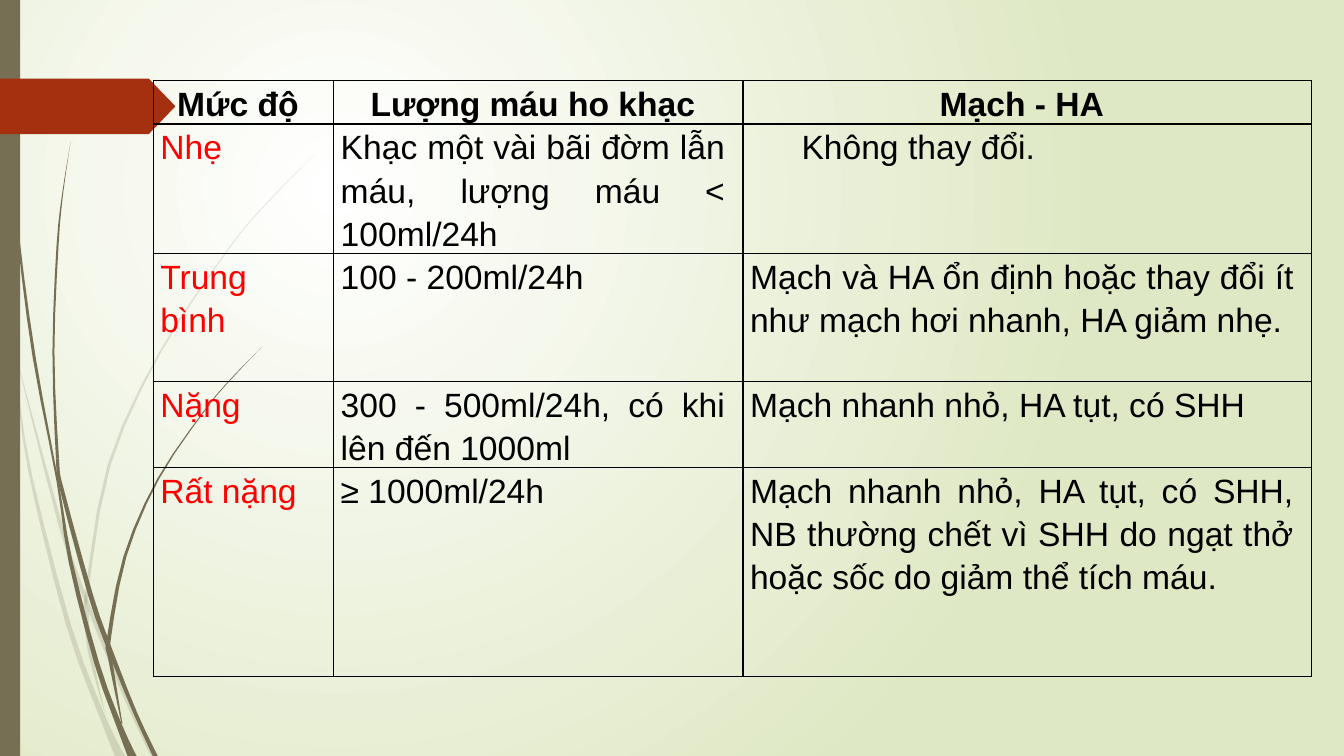
from lxml.etree import SubElement
from pptx import Presentation
from pptx.dml.color import RGBColor
from pptx.enum.shapes import MSO_SHAPE as Shape
from pptx.enum.text import PP_ALIGN as Align
from pptx.oxml.ns import qn
from pptx.util import Inches, Pt

BLACK = RGBColor(0x00, 0x00, 0x00)
RED = RGBColor(0xFF, 0x00, 0x00)
WHITE = RGBColor(0xFF, 0xFF, 0xFF)
PALE_GREEN = RGBColor(0xDF, 0xE8, 0xC4)
OLIVE = RGBColor(0x76, 0x6F, 0x54)
RUST = RGBColor(0xA5, 0x30, 0x10)

ROWS = [
    ("Mức độ", "Lượng máu ho khạc", "Mạch - HA"),
    ("Nhẹ", "Khạc một vài bãi đờm lẫn máu, lượng máu < 100ml/24h", "Không thay đổi."),
    ("Trung bình", "100 - 200ml/24h",
     "Mạch và HA ổn định hoặc thay đổi ít như mạch hơi nhanh, HA giảm nhẹ."),
    ("Nặng", "300 - 500ml/24h, có khi lên đến 1000ml", "Mạch nhanh nhỏ, HA tụt, có SHH"),
    ("Rất nặng", "≥ 1000ml/24h",
     "Mạch nhanh nhỏ, HA tụt, có SHH, NB thường chết vì SHH do ngạt thở "
     "hoặc sốc do giảm thể tích máu."),
]
COLUMN_WIDTHS = (1.79, 4.06, 5.64)
ROW_HEIGHTS = (0.43, 1.28, 1.27, 0.86, 2.07)
INDENTED_CELL = (1, 2)

# Grass blades: knots where the blade is cut into sections,
# then (x, y, width) along its middle
FAINT_BLADES = [
    ((2, 6), [(0, 2.9, 0.02), (0.1, 3.46, 0.01), (0.11, 3.5, 0.01), (0.17, 3.83, 0.01),
              (0.3, 4.7, 0.03), (0.68, 6.2, 0.05), (1.02, 7.12, 0.06), (1.19, 7.5, 0.1)]),
    ((2,), [(0.14, 3.45, 0), (0.6, 5.21, 0.04), (0.86, 5.97, 0.04), (1.25, 6.93, 0.04),
            (1.52, 7.5, 0.05)]),
    ((5, 6), [(3.12, 1.53, 0), (2.68, 1.98, 0.01), (2.28, 2.45, 0.01), (1.59, 3.49, 0.02),
              (1.08, 4.62, 0.03), (0.86, 5.88, 0.03), (0.86, 6.07, 0.04),
              (0.89, 6.46, 0.04), (1.05, 7.11, 0)]),
]
SOLID_BLADES = [
    ((5, 8), [(0.04, 0, 0.01), (0.05, 0.48, 0.01), (0.08, 1.1, 0.01), (0.18, 2.33, 0.02),
              (0.34, 3.55, 0.03), (0.57, 4.77, 0.02), (0.7, 5.57, 0.04),
              (0.96, 6.58, 0.05), (1.18, 7.19, 0.06), (1.31, 7.5, 0.09)]),
    ((4, 5, 7), [(0.7, 1.41, 0), (0.62, 1.93, 0.01), (0.57, 2.45, 0.02),
                 (0.53, 3.49, 0.02), (0.57, 4.55, 0.03), (0.62, 4.88, 0.04),
                 (0.9, 5.91, 0.05), (1.08, 6.42, 0.05), (1.34, 7.07, 0.04),
                 (1.54, 7.5, 0.05)]),
    ((5, 6), [(2.6, 3.44, 0), (2.31, 3.74, 0.01), (2.04, 4.06, 0.01), (1.57, 4.75, 0.02),
              (1.24, 5.52, 0.03), (1.08, 6.34, 0.04), (1.09, 6.52, 0.04),
              (1.21, 7.18, 0.01)]),
]
CURVE_STEPS = 3


def paint(shape, color, opacity=100):
    shape.shadow.inherit = False
    shape.fill.solid()
    shape.fill.fore_color.rgb = color
    shape.line.fill.background()
    if opacity < 100:
        color_node = shape.element.spPr.find(f"{qn('a:solidFill')}/{qn('a:srgbClr')}")
        SubElement(color_node, qn("a:alpha"), val=str(opacity * 1000))


def smooth_points(knots):
    """Fill in points between the knots with a Catmull-Rom curve."""
    ends = [knots[0], *knots, knots[-1]]
    points = []
    for before, start, stop, after in zip(ends, ends[1:], ends[2:], ends[3:]):
        for step in range(CURVE_STEPS):
            t = step / CURVE_STEPS
            points.append(tuple(
                b + t / 2 * (c - a + t * (2 * a - 5 * b + 4 * c - d
                                          + t * (3 * b - a - 3 * c + d)))
                for a, b, c, d in zip(before, start, stop, after)))
    return points + [knots[-1]]


def add_blade(page, cuts, knots, opacity):
    points = smooth_points(knots)
    bounds = [0, *cuts, len(knots) - 1]
    for first, last in zip(bounds, bounds[1:]):
        section = points[first * CURVE_STEPS:last * CURVE_STEPS + 1]
        left_edge = [(Inches(x - width / 2), Inches(y)) for x, y, width in section]
        right_edge = [(Inches(x + width / 2), Inches(y)) for x, y, width in section]
        outline = left_edge + right_edge[::-1]
        builder = page.shapes.build_freeform(*outline[0])
        builder.add_line_segments(outline[1:], close=True)
        paint(builder.convert_to_shape(), OLIVE, opacity)


def set_background(page):
    fill = page.background.fill
    fill.gradient()
    for stop, color in zip(fill.gradient_stops, (WHITE, PALE_GREEN)):
        stop.color.rgb = color
    gradient = page.element.find(f".//{qn('a:gradFill')}")
    gradient.remove(gradient.find(qn("a:lin")))
    circle = SubElement(gradient, qn("a:path"), {"path": "circle"})
    SubElement(circle, qn("a:fillToRect"), l="50000", t="50000", r="100000", b="100000")


def add_borders(cell):
    properties = cell._tc.get_or_add_tcPr()
    for position, side in enumerate(("lnL", "lnR", "lnT", "lnB")):
        line = SubElement(properties, qn(f"a:{side}"), w=str(Pt(1)))
        solid = SubElement(line, qn("a:solidFill"))
        SubElement(solid, qn("a:srgbClr"), val=str(BLACK))
        properties.insert(position, line)


def fill_cell(cell, text, row, column):
    margins = {"margin_left": 0.07, "margin_right": 0.18, "margin_top": 0, "margin_bottom": 0}
    for name, value in margins.items():
        setattr(cell, name, Inches(value))
    cell.fill.background()
    add_borders(cell)
    para = cell.text_frame.paragraphs[0]
    para.line_spacing = 1.15
    para.alignment = Align.JUSTIFY if row else Align.CENTER
    if (row, column) == INDENTED_CELL:
        para.alignment = Align.LEFT
        indents = para._p.get_or_add_pPr()
        indents.set("marL", str(Inches(0.09)))
        indents.set("indent", str(Inches(0.42)))
    span = para.add_run()
    span.text = text
    font_format = {"name": "Arial", "size": Pt(24), "bold": row == 0}
    for name, value in font_format.items():
        setattr(span.font, name, value)
    span.font.color.rgb = RED if row and column == 0 else BLACK


def add_severity_table(page):
    frame = page.shapes.add_table(
        len(ROWS), len(COLUMN_WIDTHS), Inches(1.52), Inches(0.8),
        Inches(sum(COLUMN_WIDTHS)), Inches(sum(ROW_HEIGHTS)))
    table = frame.table
    table.first_row = table.horz_banding = False
    for column, width in zip(table.columns, COLUMN_WIDTHS):
        column.width = Inches(width)
    for row, height in zip(table.rows, ROW_HEIGHTS):
        row.height = Inches(height)
    for row, texts in enumerate(ROWS):
        for column, text in enumerate(texts):
            fill_cell(table.cell(row, column), text, row, column)


def main():
    deck = Presentation()
    deck.slide_width, deck.slide_height = Inches(13.33), Inches(7.5)
    page = deck.slides.add_slide(deck.slide_layouts[6])
    set_background(page)
    for blades, opacity in ((FAINT_BLADES, 20), (SOLID_BLADES, 100)):
        for cuts, knots in blades:
            add_blade(page, cuts, knots, opacity)
    side_bar = page.shapes.add_shape(Shape.RECTANGLE, 0, 0, Inches(0.2), deck.slide_height)
    paint(side_bar, OLIVE)
    arrow_tab = page.shapes.add_shape(
        Shape.PENTAGON, 0, Inches(0.78), Inches(1.74), Inches(0.55))
    arrow_tab.adjustments[0] = 0.48
    paint(arrow_tab, RUST)
    add_severity_table(page)
    deck.save("out.pptx")


if __name__ == "__main__":
    main()
